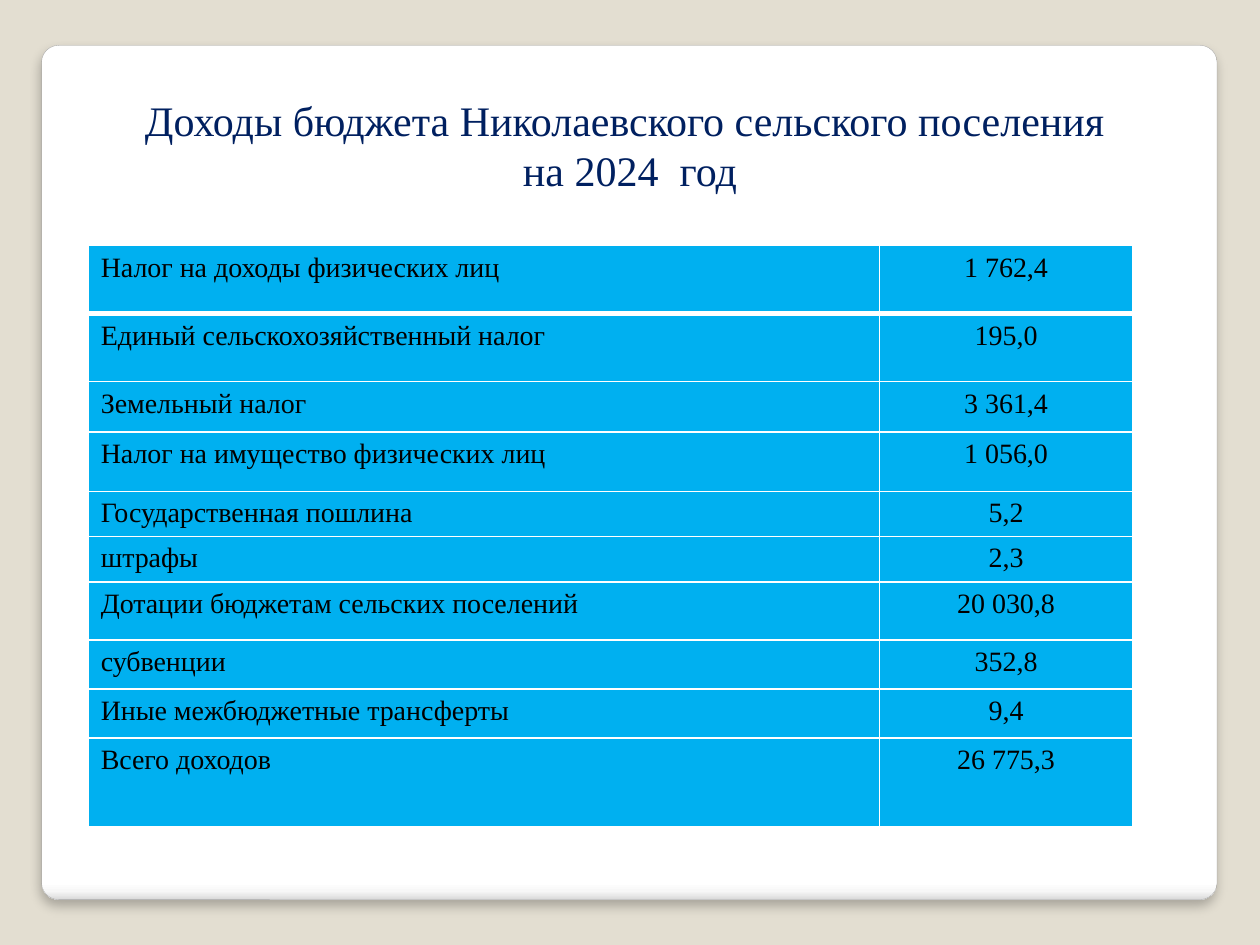
import dataclasses

import pptx
import pptx.dml.color
import pptx.enum.shapes
import pptx.enum.text
import pptx.oxml
import pptx.oxml.ns
import pptx.util
from pptx.util import Inches

ALIGN = pptx.enum.text.PP_ALIGN


@dataclasses.dataclass(frozen=True)
class Theme:
    font: str = "Times New Roman"
    title_size: int = 24
    table_size: int = 16
    background: str = "E3DED1"
    title: str = "002060"
    text: str = "000000"
    cell: str = "00B0F0"
    border: str = "FFFFFF"
    card_line: str = "A4A4A4"
    card_stops: tuple = ((0, "FFFFFF"), (98, "FFFFFF"), (99, "F7F7F7"), (100, "DADADA"))


THEME = Theme()
TITLE_LINES = ("Доходы бюджета Николаевского сельского поселения ", "на 2024  год")
COLUMN_WIDTHS = (6.28, 2.01)
INCOME_ROWS = (
    ("Налог на доходы физических лиц", "1 762,4", 0.54),
    ("Единый сельскохозяйственный налог", "195,0", 0.54),
    ("Земельный налог", "3 361,4", 0.4),
    ("Налог на имущество физических лиц", "1 056,0", 0.47),
    ("Государственная пошлина", "5,2", 0.36),
    ("штрафы", "2,3", 0.36),
    ("Дотации бюджетам сельских поселений", "20 030,8", 0.46),
    ("субвенции", "352,8", 0.39),
    ("Иные межбюджетные трансферты", "9,4", 0.39),
    ("Всего доходов", "26 775,3", 0.7),
)


def color(value):
    return pptx.dml.color.RGBColor.from_string(value)


def apply_format(target, values):
    for name, value in values.items():
        setattr(target, name, value)


def append_xml(parent, tag, content, attributes=""):
    namespace = pptx.oxml.ns.nsdecls("a")
    parent.append(pptx.oxml.parse_xml(f"<a:{tag} {namespace} {attributes}>{content}</a:{tag}>"))


def write_paragraph(paragraph, text, size, text_color, alignment):
    paragraph.alignment = alignment
    run = paragraph.add_run()
    run.text = text
    apply_format(run.font, {"name": THEME.font, "size": pptx.util.Pt(size), "bold": False})
    run.font.color.rgb = color(text_color)


def add_card(slide, box):
    card = slide.shapes.add_shape(pptx.enum.shapes.MSO_SHAPE.ROUNDED_RECTANGLE, *box)
    card.adjustments[0] = 0.02
    card.line.color.rgb = color(THEME.card_line)
    card.line.width = pptx.util.Pt(0.16)
    card.fill.gradient()
    card.fill.gradient_angle = 270
    properties = card._element.spPr
    stops = properties.find(".//" + pptx.oxml.ns.qn("a:gsLst"))
    for stop in list(stops):
        stops.remove(stop)
    for position, value in THEME.card_stops:
        append_xml(stops, "gs", f'<a:srgbClr val="{value}"/>', f'pos="{position * 1000}"')
    card.shadow.inherit = False
    effects = properties.find(pptx.oxml.ns.qn("a:effectLst"))
    append_xml(
        effects,
        "outerShdw",
        '<a:srgbClr val="000000"><a:alpha val="25000"/></a:srgbClr>',
        f'blurRad="{pptx.util.Pt(6)}" dist="{pptx.util.Pt(4)}" dir="5400000" rotWithShape="0"',
    )
    slide.shapes._spTree.insert(2, card._element)


def place_title(slide, box):
    title = slide.shapes.title
    apply_format(title, dict(zip(("left", "top", "width", "height"), box)))
    frame = title.text_frame
    apply_format(frame, {
        "word_wrap": True,
        "auto_size": pptx.enum.text.MSO_AUTO_SIZE.NONE,
        "vertical_anchor": pptx.enum.text.MSO_ANCHOR.TOP,
    })
    for index, line in enumerate(TITLE_LINES):
        paragraph = frame.add_paragraph() if index else frame.paragraphs[0]
        write_paragraph(paragraph, line, THEME.title_size, THEME.title, ALIGN.CENTER)


def format_cell(cell, top_width, bottom_width):
    properties = cell._tc.get_or_add_tcPr()
    widths = {"lnL": 1, "lnR": 1, "lnT": top_width, "lnB": bottom_width}
    for side, width in widths.items():
        line_fill = f'<a:solidFill><a:srgbClr val="{THEME.border}"/></a:solidFill>'
        append_xml(properties, side, line_fill, f'w="{pptx.util.Pt(width)}"')
    cell.fill.solid()
    cell.fill.fore_color.rgb = color(THEME.cell)


def add_income_table(slide, box):
    table = slide.shapes.add_table(len(INCOME_ROWS), len(COLUMN_WIDTHS), *box).table
    for column, width in zip(table.columns, COLUMN_WIDTHS):
        column.width = Inches(width)
    for index, (source, amount, height) in enumerate(INCOME_ROWS):
        table.rows[index].height = Inches(height)
        for column, (text, alignment) in enumerate(((source, ALIGN.LEFT), (amount, ALIGN.CENTER))):
            cell = table.cell(index, column)
            format_cell(cell, 3 if index == 1 else 1, 3 if index == 0 else 1)
            paragraph = cell.text_frame.paragraphs[0]
            write_paragraph(paragraph, text, THEME.table_size, THEME.text, alignment)


def build_income_slide(presentation):
    slide = presentation.slides.add_slide(presentation.slide_layouts.get_by_name("Title Only"))
    slide.background.fill.solid()
    slide.background.fill.fore_color.rgb = color(THEME.background)
    add_card(slide, (Inches(0.33), Inches(0.36), Inches(9.33), Inches(6.78)))
    place_title(slide, (Inches(0.78), Inches(0.7), Inches(8.44), Inches(1)))
    add_income_table(slide, (Inches(0.7), Inches(1.95), Inches(8.29), Inches(4.61)))


def main():
    presentation = pptx.Presentation()
    apply_format(presentation, {"slide_width": Inches(10), "slide_height": Inches(7.5)})
    build_income_slide(presentation)
    presentation.save("out.pptx")


if __name__ == "__main__":
    main()
